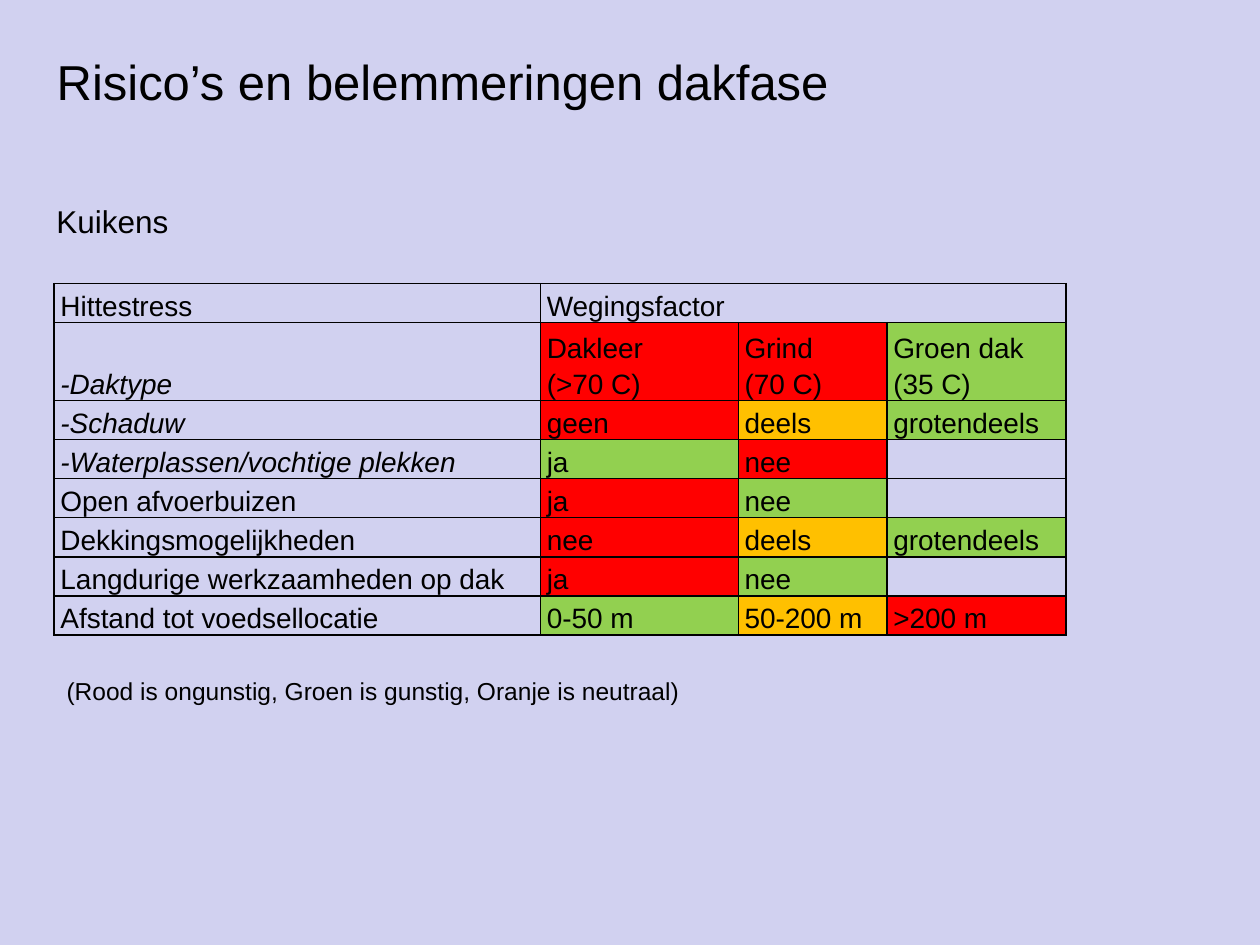
from lxml.etree import SubElement
from pptx import Presentation
from pptx.dml.color import RGBColor
from pptx.enum.text import MSO_ANCHOR, PP_ALIGN
from pptx.oxml.ns import qn
from pptx.util import Inches, Pt

COLORS = {
    "background": "D1D1F0",
    "text": "000000",
    "red": "FF0000",
    "orange": "FFC000",
    "green": "92D050",
}
FONT = "Arial"
COLUMN_WIDTHS = [3.86, 1.57, 1.18, 1.42]
ROW_HEIGHT = 0.31

# Each row: label, then (text, rating) for every weighting factor
ROWS = [
    ("Hittestress", ("Wegingsfactor", None)),
    ("-Daktype", ("Dakleer\n(>70 C)", "red"), ("Grind\n(70 C)", "red"),
     ("Groen dak\n(35 C)", "green")),
    ("-Schaduw", ("geen", "red"), ("deels", "orange"), ("grotendeels", "green")),
    ("-Waterplassen/vochtige plekken", ("ja", "green"), ("nee", "red")),
    ("Open afvoerbuizen", ("ja", "red"), ("nee", "green")),
    ("Dekkingsmogelijkheden", ("nee", "red"), ("deels", "orange"),
     ("grotendeels", "green")),
    ("Langdurige werkzaamheden op dak", ("ja", "red"), ("nee", "green")),
    ("Afstand tot voedsellocatie", ("0-50 m", "green"), ("50-200 m", "orange"),
     (">200 m", "red")),
]


def color(name):
    return RGBColor.from_string(COLORS[name])


def format_paragraph(paragraph, size, italic=False):
    paragraph.alignment = PP_ALIGN.LEFT
    paragraph.font.name = FONT
    paragraph.font.size = Pt(size)
    paragraph.font.italic = italic
    paragraph.font.color.rgb = color("text")


def fill_text(shape, text, size):
    frame = shape.text_frame
    frame.text = text
    frame.word_wrap = False
    frame.vertical_anchor = MSO_ANCHOR.TOP
    format_paragraph(frame.paragraphs[0], size)


def add_title(slide, text):
    title = slide.shapes.title
    title.left, title.top = Inches(0.35), Inches(0.36)
    title.width, title.height = Inches(6.41), Inches(0.57)
    fill_text(title, text, 28)


def add_text(slide, text, left, top, width, height, size):
    box = slide.shapes.add_textbox(
        Inches(left), Inches(top), Inches(width), Inches(height))
    fill_text(box, text, size)


def add_borders(cell):
    properties = cell._tc.get_or_add_tcPr()
    for side in ("lnL", "lnR", "lnT", "lnB"):
        line = SubElement(properties, qn(f"a:{side}"), w=str(Pt(1)))
        fill = SubElement(line, qn("a:solidFill"))
        SubElement(fill, qn("a:srgbClr"), val=COLORS["text"])


def format_cell(cell, text, rating):
    cell.margin_left = cell.margin_right = Inches(0.05)
    cell.margin_top = cell.margin_bottom = 0
    cell.vertical_anchor = MSO_ANCHOR.BOTTOM
    add_borders(cell)
    if rating:
        cell.fill.solid()
        cell.fill.fore_color.rgb = color(rating)
    else:
        cell.fill.background()
    if text:
        cell.text = text
        for paragraph in cell.text_frame.paragraphs:
            paragraph.line_spacing = 1.15
            format_paragraph(paragraph, 16, italic=text.startswith("-"))


def add_risk_table(slide):
    table = slide.shapes.add_table(
        len(ROWS), len(COLUMN_WIDTHS), Inches(0.43), Inches(2.25),
        Inches(sum(COLUMN_WIDTHS)), Inches(ROW_HEIGHT * len(ROWS))).table
    table.first_row = table.horz_banding = False
    for column, width in zip(table.columns, COLUMN_WIDTHS):
        column.width = Inches(width)
    for row_index, (label, *factors) in enumerate(ROWS):
        line_count = max(text.count("\n") + 1 for text, _ in factors)
        table.rows[row_index].height = Inches(ROW_HEIGHT * line_count)
        entries = [(label, None), *factors]
        entries += [("", None)] * (len(COLUMN_WIDTHS) - len(entries))
        for column_index, (text, rating) in enumerate(entries):
            format_cell(table.cell(row_index, column_index), text, rating)
    # The heading covers all factor columns
    table.cell(0, 1).merge(table.cell(0, 3))


def main():
    presentation = Presentation()
    presentation.slide_width = Inches(10)
    presentation.slide_height = Inches(7.5)
    slide = presentation.slides.add_slide(presentation.slide_layouts[5])
    slide.background.fill.solid()
    slide.background.fill.fore_color.rgb = color("background")

    # Headings
    add_title(slide, "Risico’s en belemmeringen dakfase")
    add_text(slide, "Kuikens", 0.35, 1.55, 1.1, 1.38, 18)

    # Table and its colour key
    add_risk_table(slide)
    add_text(slide, "(Rood is ongunstig, Groen is gunstig, Oranje is neutraal)",
             0.43, 5.32, 5.09, 0.64, 14)

    presentation.save("out.pptx")


if __name__ == "__main__":
    main()
